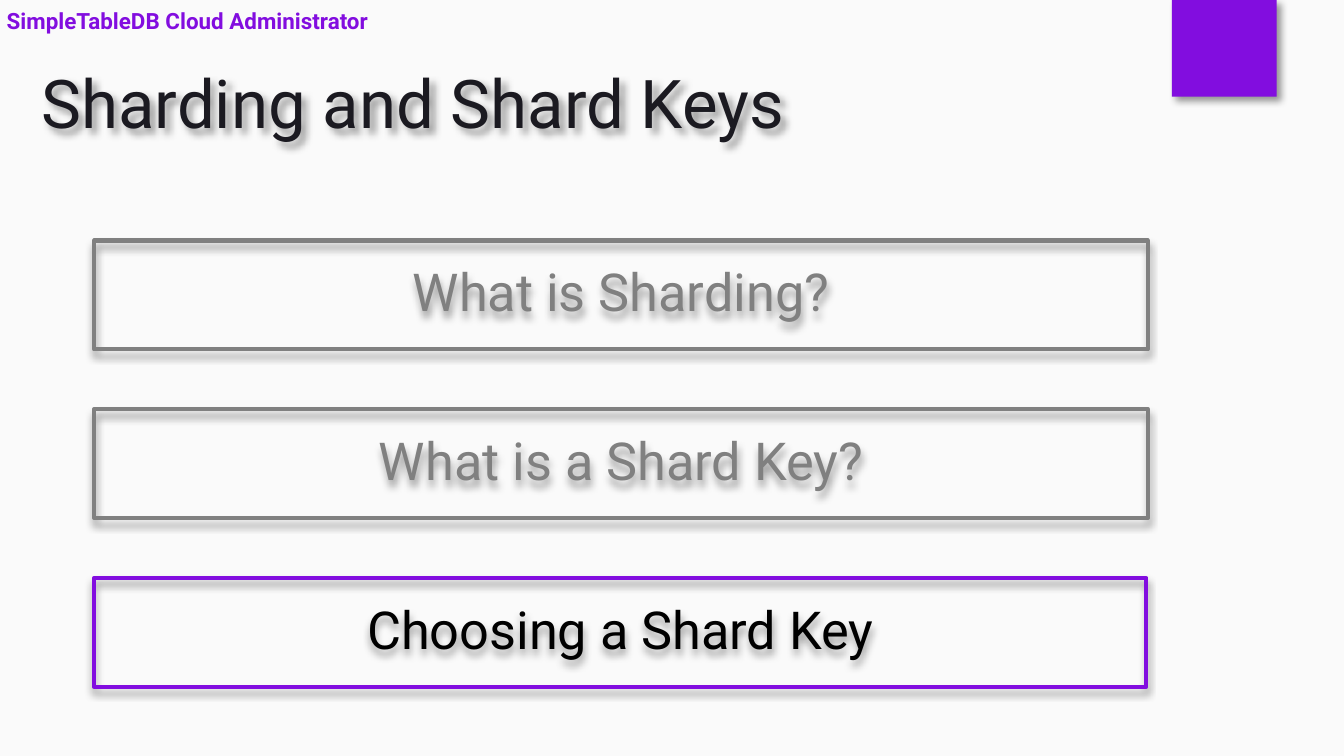
from lxml.etree import SubElement
from pptx import Presentation
from pptx.dml.color import RGBColor
from pptx.enum.shapes import MSO_SHAPE
from pptx.enum.text import MSO_ANCHOR, MSO_AUTO_SIZE, PP_ALIGN
from pptx.oxml.ns import qn
from pptx.util import Inches, Pt

PURPLE = "820DDF"
GRAY = "808080"


def color(hex_string):
    return RGBColor.from_string(hex_string)


def add_shadow(shape, angle):
    shape.shadow.inherit = False
    effects = shape._element.spPr.find(qn("a:effectLst"))
    shadow = SubElement(effects, qn("a:outerShdw"), blurRad=str(Pt(4)), dist=str(Pt(3)),
                        dir=str(angle * 60000), algn="tl", rotWithShape="0")
    black = SubElement(shadow, qn("a:srgbClr"), val="000000")
    SubElement(black, qn("a:alpha"), val="40000")


# Widescreen slide, 16:9
presentation = Presentation()
presentation.slide_width = Inches(10)
presentation.slide_height = Inches(10) * 9 // 16
# The Comparison layout offers a title and four text placeholders
slide = presentation.slides.add_slide(presentation.slide_layouts[4])
slide.background.fill.solid()
slide.background.fill.fore_color.rgb = color("FAFAFA")
title, course, *topics = slide.placeholders

# Corner square, behind everything else
square = slide.shapes.add_shape(MSO_SHAPE.RECTANGLE, Inches(8.72), 0, Inches(0.78), Inches(0.72))
square.fill.solid()
square.fill.fore_color.rgb = color(PURPLE)
square.line.fill.background()
add_shadow(square, 45)
slide.shapes._spTree.insert(2, square._element)

# Text: placeholder, wording, position, size, color, anchor, alignment
texts = [
    (course, "SimpleTableDB Cloud Administrator", (-0.05, -0.05, 8, 0.3),
     12, PURPLE, MSO_ANCHOR.TOP, PP_ALIGN.LEFT),
    (title, "Sharding and Shard Keys", (0.21, 0.26, 8.44, 1),
     36, "1B1A21", MSO_ANCHOR.MIDDLE, PP_ALIGN.LEFT),
]
topic_texts = [("What is Sharding?", GRAY), ("What is a Shard Key?", GRAY),
               ("Choosing a Shard Key", "000000")]
for index, (topic, (text, text_color)) in enumerate(zip(topics, topic_texts)):
    texts.append((topic, text, (0.7, 1.79 + index * 2.51 / 2, 7.84, 0.81),
                  28, text_color, MSO_ANCHOR.MIDDLE, PP_ALIGN.CENTER))

for shape, text, position, size, text_color, anchor, alignment in texts:
    shape.left, shape.top, shape.width, shape.height = map(Inches, position)
    frame = shape.text_frame
    frame.text = text
    frame.word_wrap = True
    frame.auto_size = MSO_AUTO_SIZE.NONE
    frame.vertical_anchor = anchor
    paragraph = frame.paragraphs[0]
    properties = paragraph._p.get_or_add_pPr()
    properties.set("marL", "0")
    properties.set("indent", "0")
    SubElement(properties, qn("a:buNone"))
    paragraph.alignment = alignment
    paragraph.space_before = Pt(0)
    paragraph.font.name = "Roboto"
    paragraph.font.size = Pt(size)
    paragraph.font.bold = shape is course
    paragraph.font.color.rgb = color(text_color)

# Wide insets for the two headings
for heading in (course, title):
    frame = heading.text_frame
    frame.margin_left = frame.margin_right = Inches(0.1)
    frame.margin_top = frame.margin_bottom = Inches(0.1)
add_shadow(title, 45)

# Topic outlines, the current topic in purple
for topic, line_color in zip(topics, (GRAY, GRAY, PURPLE)):
    topic.line.color.rgb = color(line_color)
    topic.line.width = Pt(2.25)
    topic.text_frame.paragraphs[0].line_spacing = 0.9
    add_shadow(topic, 90)
topics[-1].width = Inches(7.83)

presentation.save("out.pptx")
